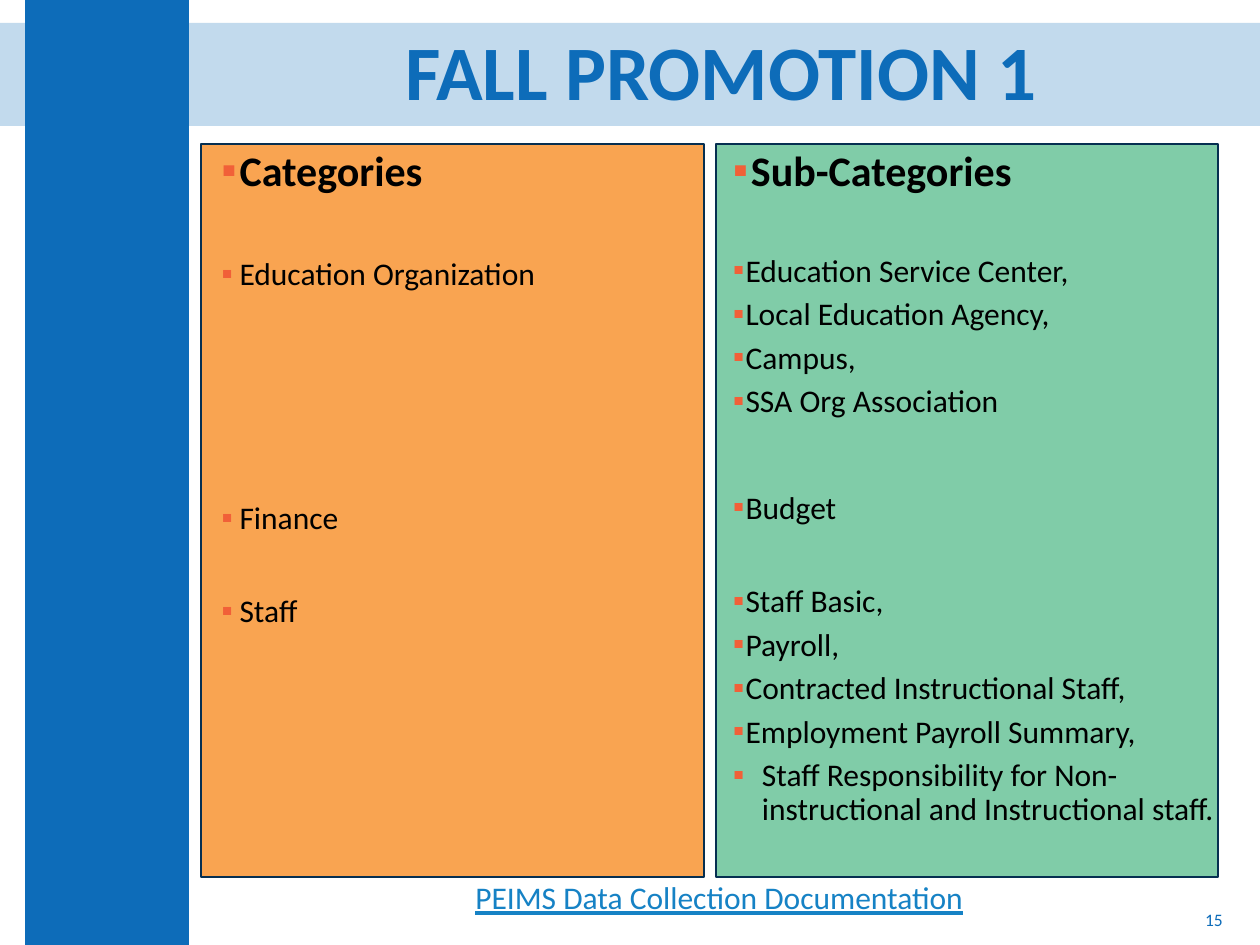
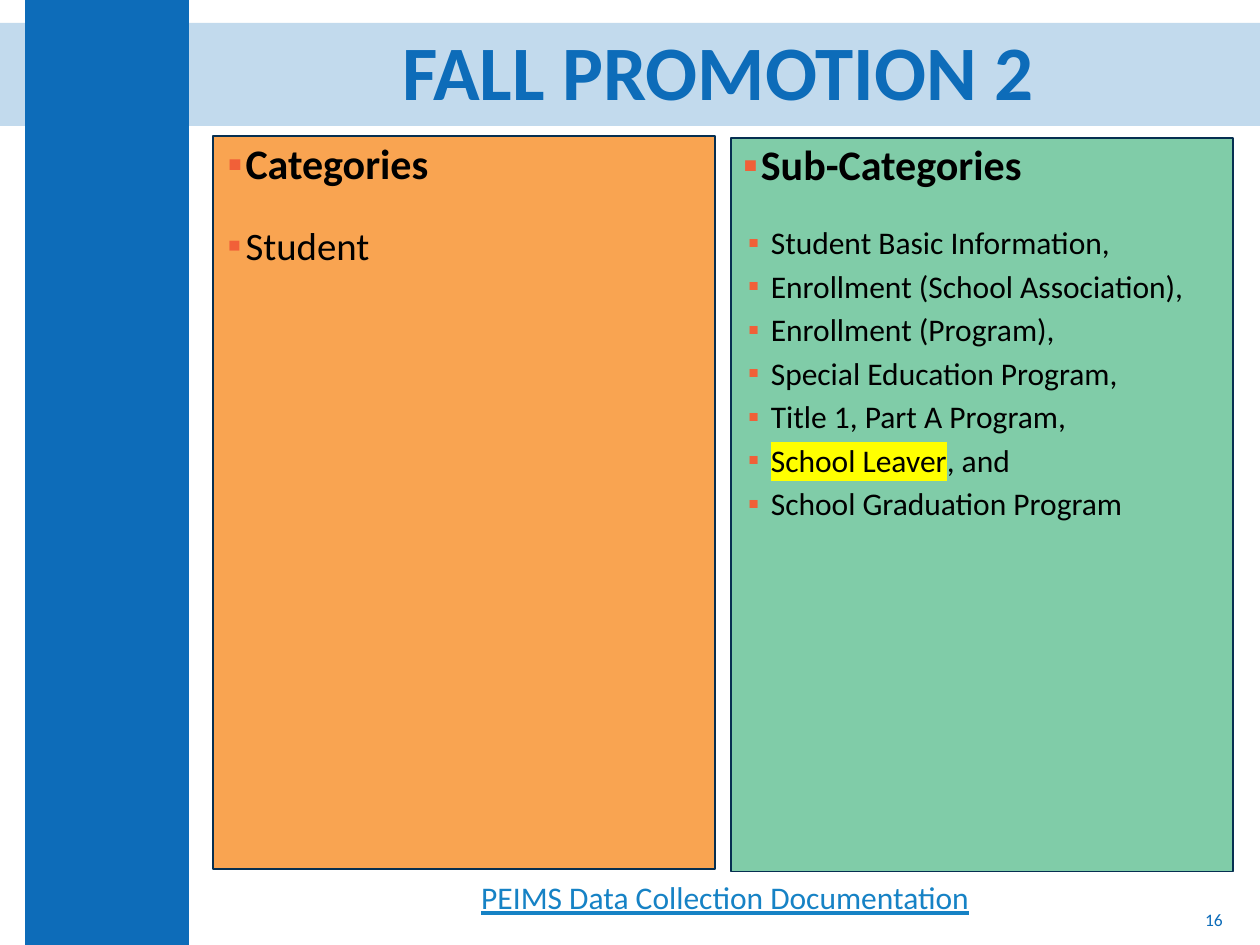
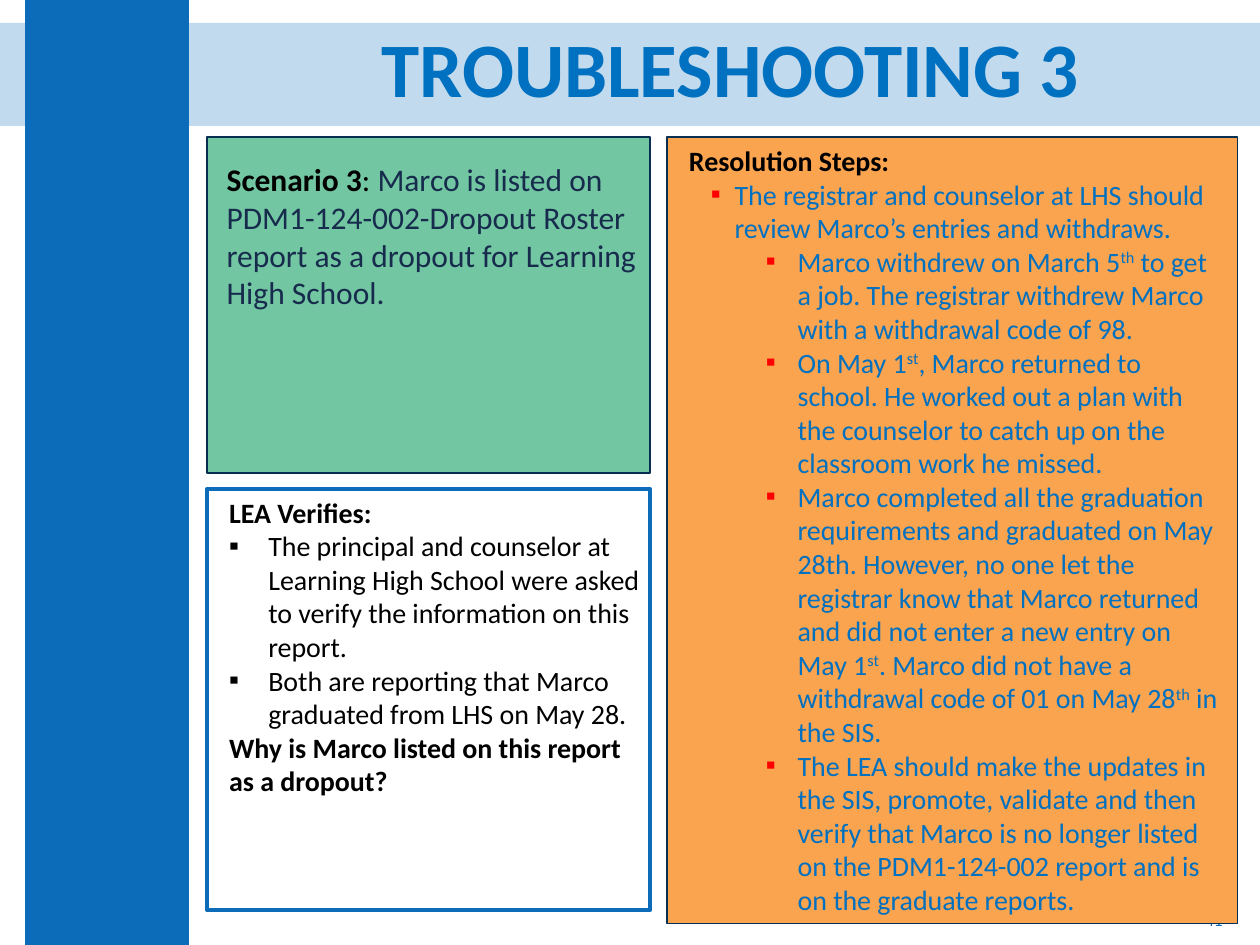
"""Build three training slides: two category lists and a troubleshooting case."""
import pptx
import pptx.dml.color
import pptx.enum.shapes
import pptx.enum.text
import pptx.oxml
import pptx.oxml.ns
import pptx.util
from lxml import etree

Cm, Pt = pptx.util.Cm, pptx.util.Pt
RGB = pptx.dml.color.RGBColor.from_string
ALIGN = pptx.enum.text.PP_ALIGN
ANCHOR = pptx.enum.text.MSO_ANCHOR
qn = pptx.oxml.ns.qn

COLORS = {
    "blue": "0D6CB9", "band": "C2DAED", "green": "80CCA8", "mint": "72C6A2",
    "orange": "F9A451", "amber": "FAA450", "navy": "062F51", "bullet": "F16038",
    "link": "1682C5", "title": "0070C0", "ink": "172B4D", "black": "000000",
    "red": "FF0000", "yellow": "FFFF00",
}


def add_box(s, at, fill=None, line=None, width=1):
    sp = s.shapes.add_shape(pptx.enum.shapes.MSO_SHAPE.RECTANGLE, *map(Cm, at))
    sp.shadow.inherit = False
    if fill:
        sp.fill.solid()
        sp.fill.fore_color.rgb = RGB(COLORS[fill])
    else:
        sp.fill.background()
    if line:
        sp.line.color.rgb = RGB(COLORS[line])
        sp.line.width = Pt(width)
    else:
        sp.line.fill.background()
    return sp


def write(sp, paras, size, color="black", bold=False, align=ALIGN.LEFT,
          anchor=ANCHOR.TOP, spacing=1.0):
    tf = sp.text_frame
    tf.word_wrap = True
    tf.vertical_anchor = anchor
    for i, para in enumerate(paras):
        p = tf.paragraphs[0] if i == 0 else tf.add_paragraph()
        pPr = p._p.get_or_add_pPr()
        left, hang = para.get("indent", (0, 0))
        pPr.set("marL", str(Cm(left)))
        pPr.set("indent", str(Cm(-hang)))
        if "bullet" in para:
            clr = etree.SubElement(pPr, qn("a:buClr"))
            etree.SubElement(clr, qn("a:srgbClr"), val=COLORS[para["bullet"]])
            etree.SubElement(pPr, qn("a:buFont"), typeface="Calibri")
            etree.SubElement(pPr, qn("a:buChar"), char="▪")
        fmt = {"alignment": align, "line_spacing": spacing,
               "space_before": Pt(para.get("before", 0)), "level": para.get("level", 0)}
        for k, v in fmt.items():
            setattr(p, k, v)
        for text, own in para["runs"]:
            look = {"size": size, "color": color, "bold": bold, **para.get("look", {}), **own}
            r = p.add_run()
            r.text = text
            fmt = {"name": "Calibri", "size": Pt(look["size"]), "bold": look["bold"],
                   "underline": look.get("underline")}
            for k, v in fmt.items():
                setattr(r.font, k, v)
            r.font.color.rgb = RGB(COLORS[look["color"]])
            rPr = r._r.get_or_add_rPr()
            if "raised" in look:
                rPr.set("baseline", "30000")
            if "highlight" in look:
                mark = etree.Element(qn("a:highlight"))
                etree.SubElement(mark, qn("a:srgbClr"), val=COLORS[look["highlight"]])
                rPr.find(qn("a:solidFill")).addnext(mark)


prs = pptx.Presentation()
prs.slide_width, prs.slide_height = Cm(25.4), Cm(19.05)

titles = [
    ("FALL PROMOTION 1", "15", 4, 0.48, "blue"),
    ("FALL PROMOTION 2", "16", 3.94, 0.48, "blue"),
    ("TROUBLESHOOTING 3", "41", 4.19, 0.43, "title"),
]
slides = []
for title, number, left, top, color in titles:
    s = prs.slides.add_slide(prs.slide_layouts[6])
    add_box(s, (0, 0.46, 25.4, 2.08), "band")
    add_box(s, (0.51, 0, 3.3, 19.05), "blue")
    sp = s.shapes.add_textbox(*map(Cm, (19.18, 18.03, 5.72, 1.02)))
    write(sp, [{"runs": [(number, {})]}], 10, "blue", align=ALIGN.RIGHT, anchor=ANCHOR.MIDDLE)
    sp = s.shapes.add_textbox(*map(Cm, (left, top, 21.08, 2.08)))
    write(sp, [{"runs": [(title, {})]}], 44, color, True, ALIGN.CENTER, ANCHOR.MIDDLE, 0.9)
    slides.append(s)

heading = {"size": 24, "bold": True}
wide, tight, hung, last = (0.36, 0.36), (0.25, 0.25), (0.56, 0.46), (0.58, 0.58)
gap = 5.4
promotions = [
    {
        "orange": ((4.06, 2.9), (4.22, 2.9, 9.8, 12.93), [
            ("Categories", 0, wide, heading),
            ("Education Organization", 36, wide, {}),
            ("Finance", 120.2, wide, {}),
            ("Staff", 33.4, wide, {}),
        ]),
        "green": ((14.43, 2.9), (14.53, 2.9, 10.59, 14.71), [
            ("Sub-Categories", 0, wide, heading),
            ("Education Service Center,", 34.1, tight, {}),
            ("Local Education Agency,", gap, tight, {}),
            ("Campus,", gap, tight, {}),
            ("SSA Org Association", gap, tight, {}),
            ("Budget", 41.4, tight, {}),
            ("Staff Basic,", 34, tight, {}),
            ("Payroll,", gap, tight, {}),
            ("Contracted Instructional Staff,", gap, tight, {}),
            ("Employment Payroll Summary,", gap, tight, {}),
            ("Staff Responsibility for Non-instructional and Instructional staff.", gap, last, {}),
        ]),
    },
    {
        "orange": ((4.29, 2.74), (4.34, 2.77, 9.8, 12.93), [
            ("Categories", 0, wide, heading),
            ("Student", 21.5, wide, {"size": 22.2}),
        ]),
        "green": ((14.73, 2.79), (14.73, 2.79, 10.13, 11.71), [
            ("Sub-Categories", 0, wide, heading),
            ("Student Basic Information,", 21.5, hung, {}),
            ("Enrollment (School Association),", gap, hung, {}),
            ("Enrollment (Program),", gap, hung, {}),
            ("Special Education Program,", gap, hung, {}),
            ("Title 1, Part A Program,", gap, hung, {}),
            ([("School Leaver", {"highlight": "yellow"}), (", and", {})], gap, hung, {}),
            ("School Graduation Program", gap, hung, {}),
        ]),
    },
]
for s, panels, left in zip(slides, promotions, (4.22, 4.34)):
    for fill, (corner, at, items) in panels.items():
        add_box(s, (*corner, 10.13, 14.78), fill, "navy")
        paras = [{"runs": [(text, {})] if isinstance(text, str) else text, "before": before,
                  "indent": indent, "bullet": "bullet", "look": look}
                 for text, before, indent, look in items]
        write(s.shapes.add_textbox(*map(Cm, at)), paras, 18, spacing=0.9)
    sp = s.shapes.add_textbox(*map(Cm, (left, 17.58, 20.56, 1.02)))
    write(sp, [{"runs": [("PEIMS Data Collection Documentation", {"underline": True})]}],
          18, "link", align=ALIGN.CENTER)

s = slides[2]
add_box(s, (4.17, 2.77, 8.94, 6.76), "mint", "navy")
sp = s.shapes.add_textbox(*map(Cm, (4.32, 3.1, 8.81, 4.65)))
write(sp, [{"runs": [
    ("Scenario 3", {"bold": True}),
    (": ", {}),
    ("Marco is listed on PDM1-124-002-Dropout Roster report as a dropout for "
     "Learning High School.", {"color": "ink"}),
]}], 18)

add_box(s, (4.17, 9.86, 8.94, 8.48), None, "blue", 2.25)
sp = s.shapes.add_textbox(*map(Cm, (4.37, 9.86, 8.81, 6.4)))
checks = [
    "The principal and counselor at Learning High School were asked to verify the "
    "information on this report.",
    "Both are reporting that Marco graduated from LHS on May 28.",
]
paras = [{"runs": [(text, {})], "indent": (0.79, 0.79), "bullet": "black"} for text in checks]
paras.insert(0, {"runs": [("LEA Verifies:", {"bold": True})]})
paras.append({"runs": [("Why is Marco listed on this report as a dropout?", {"bold": True})]})
write(sp, paras, 16)

sup = {"raised": True}
steps = [
    [("Marco withdrew on March 5", {}), ("th", sup),
     (" to get a job. The registrar withdrew Marco with a withdrawal code of 98.", {})],
    [("On May 1", {}), ("st", sup),
     (", Marco returned to school. He worked out a plan with the counselor to catch up on "
      "the classroom work he missed.", {})],
    [("Marco completed all the graduation requirements and graduated on May 28th. However, "
      "no one let the registrar know that Marco returned and did not enter a new entry on "
      "May 1", {}), ("st", sup),
     (". Marco did not have a withdrawal code of 01 on May 28", {}), ("th", sup),
     (" in the SIS.", {})],
    [("The LEA should make the updates in the SIS, promote, validate and then verify that "
      "Marco is no longer listed on the PDM1-124-002 report and is on the graduate reports.",
      {})],
]
paras = [
    {"runs": [("Resolution Steps:", {"color": "black", "bold": True})], "indent": (0.2, 0)},
    {"runs": [("The registrar and counselor at LHS should review Marco’s entries and "
               "withdraws.", {})], "indent": (1.12, 0.48), "bullet": "red"},
]
paras += [{"runs": runs, "indent": (2.39, 0.64), "bullet": "red", "level": 1} for runs in steps]
write(add_box(s, (13.44, 2.77, 11.51, 15.85), "amber", "navy"), paras, 16, "title")

prs.save("out.pptx")
